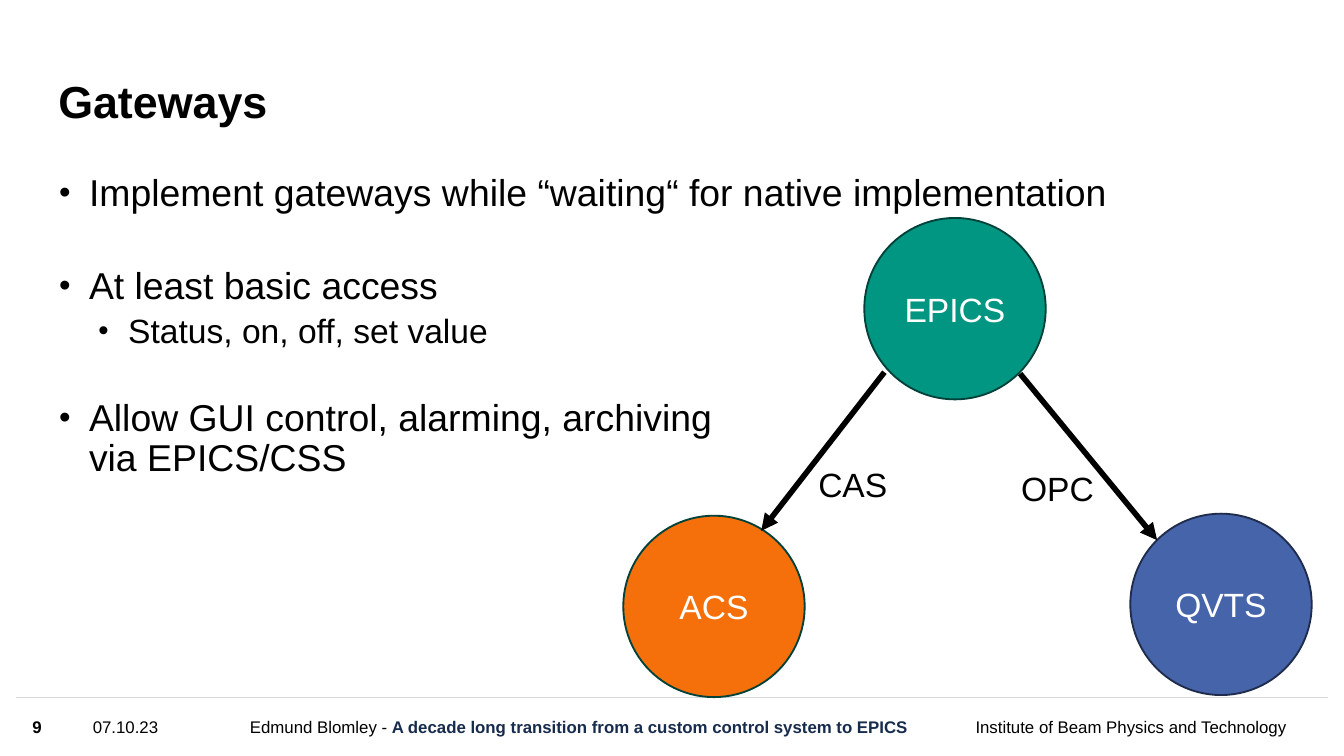
from dataclasses import dataclass

from lxml import etree
from pptx import Presentation
from pptx.dml.color import RGBColor
from pptx.enum.shapes import MSO_CONNECTOR, MSO_SHAPE
from pptx.enum.text import MSO_ANCHOR, PP_ALIGN
from pptx.oxml.ns import qn
from pptx.util import Pt

STRAIGHT = MSO_CONNECTOR.STRAIGHT
ELLIPSE = MSO_SHAPE.OVAL
TOP, MIDDLE, BOTTOM = MSO_ANCHOR.TOP, MSO_ANCHOR.MIDDLE, MSO_ANCHOR.BOTTOM
LEFT, CENTER, RIGHT = PP_ALIGN.LEFT, PP_ALIGN.CENTER, PP_ALIGN.RIGHT

FONT = "Arial"
BLACK, WHITE, NAVY, GRAY = "000000", "FFFFFF", "172B4D", "D9D9D9"
NODE_SIZE = 97.2
FOOTER_TOP, FOOTER_HEIGHT = 373.7, 31


@dataclass
class Node:
    name: str
    left: float
    top: float
    fill: str
    outline: str


@dataclass
class Arrow:
    start: tuple[float, float]
    end: tuple[float, float]


@dataclass
class Label:
    text: str
    left: float
    top: float
    width: float
    height: float
    size: float
    bold: bool = False
    align: PP_ALIGN = LEFT
    anchor: MSO_ANCHOR = MIDDLE
    margin: tuple[float, float] = (0, 0)


@dataclass
class Bullet:
    text: str
    size: float
    level: int
    indent: float
    space_before: float


NODES = [
    Node("EPICS", 463, 116.8, "009682", "004239"),
    Node("QVTS", 605.5, 275.2, "4664AA", "1F2C4B"),
    Node("ACS", 333.9, 276.3, "F56F0B", "004239"),
]
ARROWS = [
    Arrow((473.8, 199.4), (407.8, 284.4)),
    Arrow((546.5, 200.2), (619.9, 289.4)),
]
LABELS = [
    Label("Gateways", 31.2, 23, 540.7, 45.4, 24, bold=True, anchor=BOTTOM),
    Label("OPC", 540, 247, 64.8, 29, 18, anchor=TOP, margin=(7.2, 3.6)),
    Label("CAS", 431.3, 244.8, 64.8, 29, 18, anchor=TOP, margin=(7.2, 3.6)),
    Label("9", 17.3, FOOTER_TOP, 26, FOOTER_HEIGHT, 9, bold=True),
    Label("07.10.23", 49.7, FOOTER_TOP, 80.6, FOOTER_HEIGHT, 9),
    Label("Edmund Blomley - ", 133.9, FOOTER_TOP, 357.1, FOOTER_HEIGHT, 9),
    Label("Institute of Beam Physics and Technology", 433.4, FOOTER_TOP, 255.6,
          FOOTER_HEIGHT, 9, align=RIGHT),
]
TALK_TITLE = "A decade long transition from a custom control system to EPICS"
BULLETS = [
    Bullet("Implement gateways while “waiting“ for native implementation", 20, 0, 16, 0),
    Bullet("At least basic access", 20, 0, 16, 28),
    Bullet("Status, on, off, set value", 18, 1, 37, 3.6),
    Bullet("Allow GUI control, alarming, archiving\vvia EPICS/CSS", 20, 0, 16, 26),
]


def color(value: str) -> RGBColor:
    return RGBColor.from_string(value)


def style_font(font, size: float, value: str = BLACK, bold: bool = False) -> None:
    font.name = FONT
    font.size = Pt(size)
    font.bold = bold
    font.color.rgb = color(value)


def add_label(slide, label: Label):
    box = slide.shapes.add_textbox(Pt(label.left), Pt(label.top), Pt(label.width), Pt(label.height))
    frame = box.text_frame
    frame.word_wrap = True
    frame.vertical_anchor = label.anchor
    frame.margin_left = frame.margin_right = Pt(label.margin[0])
    frame.margin_top = frame.margin_bottom = Pt(label.margin[1])
    frame.text = label.text
    paragraph = frame.paragraphs[0]
    paragraph.alignment = label.align
    for run in paragraph.runs:
        style_font(run.font, label.size, bold=label.bold)
    return paragraph


def add_node(slide, node: Node) -> None:
    shape = slide.shapes.add_shape(ELLIPSE, Pt(node.left), Pt(node.top), Pt(NODE_SIZE), Pt(NODE_SIZE))
    shape.shadow.inherit = False
    shape.fill.solid()
    shape.fill.fore_color.rgb = color(node.fill)
    shape.line.color.rgb = color(node.outline)
    shape.line.width = Pt(1)
    shape.text_frame.text = node.name
    shape.text_frame.vertical_anchor = MIDDLE
    paragraph = shape.text_frame.paragraphs[0]
    paragraph.alignment = CENTER
    style_font(paragraph.runs[0].font, 18, WHITE)


def add_line(slide, path_line: Arrow, value: str, width: float, head: bool) -> None:
    points = [Pt(length) for length in (*path_line.start, *path_line.end)]
    connector = slide.shapes.add_connector(STRAIGHT, *points)
    connector.line.color.rgb = color(value)
    connector.line.width = Pt(width)
    if head:
        outline = connector.line._get_or_add_ln()
        etree.SubElement(outline, qn("a:tailEnd"), type="triangle")
    etree.SubElement(connector._element.spPr, qn("a:effectLst"))


def add_bullets(slide, bullets: list[Bullet]) -> None:
    box = slide.shapes.add_textbox(Pt(31.7), Pt(93.6), Pt(656.6), Pt(171.4))
    frame = box.text_frame
    frame.word_wrap = True
    frame.margin_left = frame.margin_right = frame.margin_top = frame.margin_bottom = 0
    for index, bullet in enumerate(bullets):
        paragraph = frame.add_paragraph() if index else frame.paragraphs[0]
        paragraph.text = bullet.text
        paragraph.level = bullet.level
        paragraph.line_spacing = 0.9
        paragraph.space_before = Pt(bullet.space_before)
        properties = paragraph._p.get_or_add_pPr()
        properties.set("marL", str(Pt(bullet.indent)))
        properties.set("indent", str(-Pt(16)))
        etree.SubElement(properties, qn("a:buSzPct"), val="88000")
        etree.SubElement(properties, qn("a:buFont"), typeface=FONT)
        etree.SubElement(properties, qn("a:buChar"), char="•")
        for run in paragraph.runs:
            style_font(run.font, bullet.size)


def main() -> None:
    presentation = Presentation()
    presentation.slide_width = Pt(720)
    presentation.slide_height = Pt(405)
    slide = presentation.slides.add_slide(presentation.slide_layouts[6])

    add_line(slide, Arrow((8.6, 373.7), (711.4, 373.7)), GRAY, 1, head=False)
    for node in NODES:
        add_node(slide, node)
    for arrow in ARROWS:
        add_line(slide, arrow, BLACK, 3, head=True)
    for label in LABELS:
        paragraph = add_label(slide, label)
        if label.text.startswith("Edmund"):
            run = paragraph.add_run()
            run.text = TALK_TITLE
            style_font(run.font, 9, NAVY, bold=True)
    add_bullets(slide, BULLETS)
    presentation.save("out.pptx")


if __name__ == "__main__":
    main()
